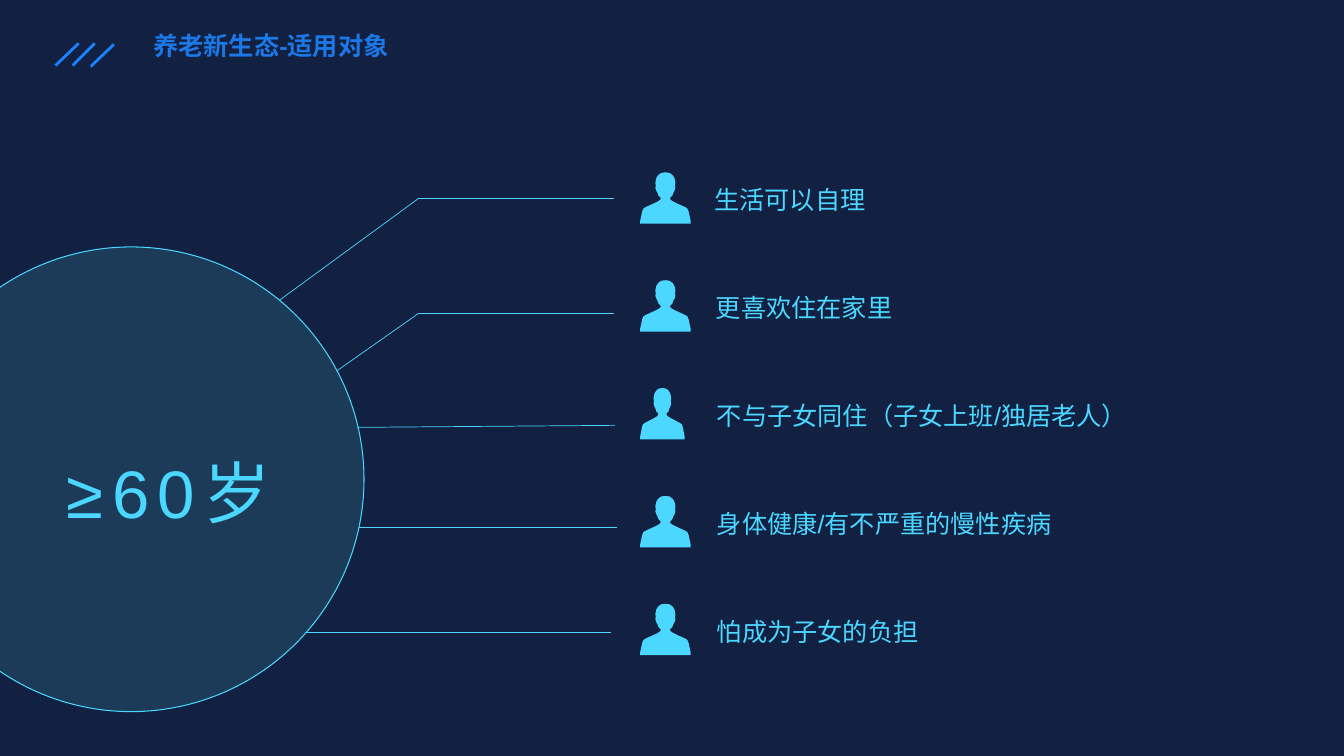
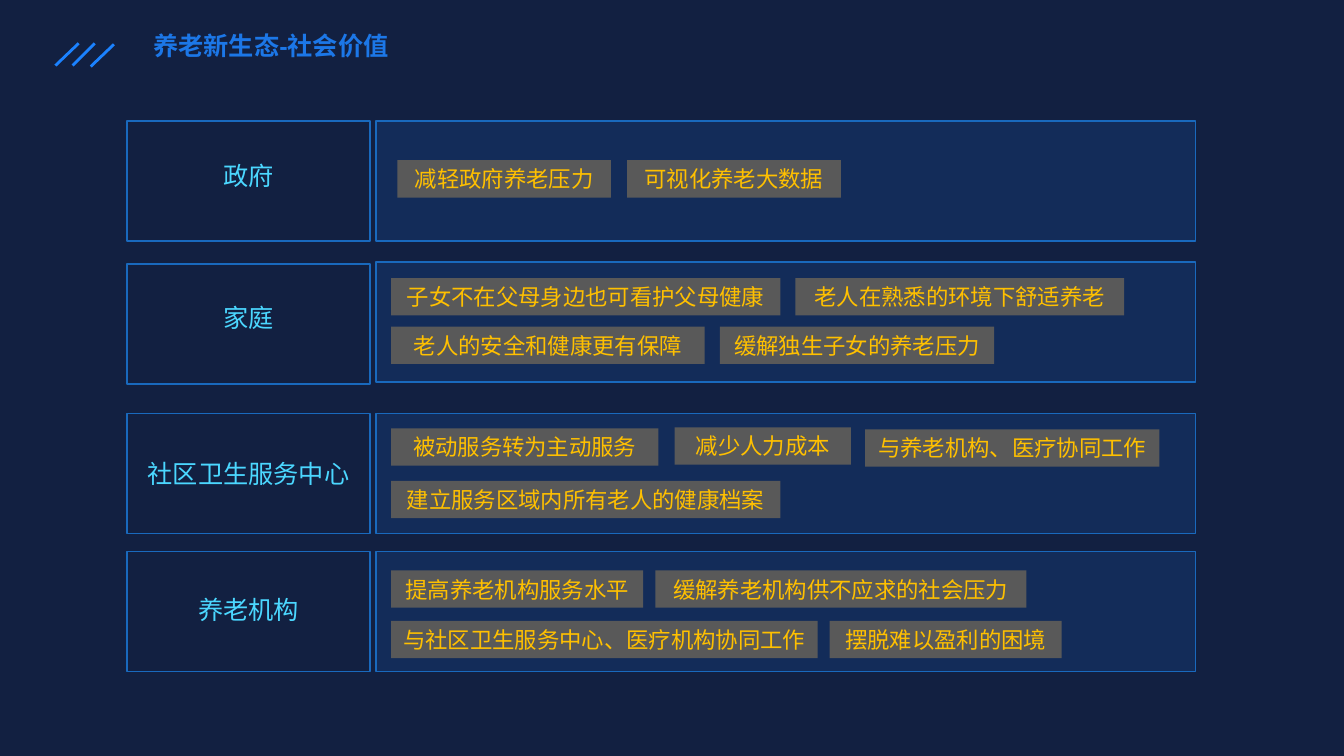
from itertools import pairwise

from lxml import etree
from pptx import Presentation
from pptx.dml.color import RGBColor
from pptx.enum.shapes import MSO_CONNECTOR, MSO_SHAPE
from pptx.enum.text import MSO_ANCHOR, MSO_AUTO_SIZE, PP_ALIGN
from pptx.oxml.ns import qn
from pptx.util import Inches, Pt

STRAIGHT = MSO_CONNECTOR.STRAIGHT
OVAL, RECTANGLE = MSO_SHAPE.OVAL, MSO_SHAPE.RECTANGLE
LEFT, CENTER = PP_ALIGN.LEFT, PP_ALIGN.CENTER
TOP, MIDDLE = MSO_ANCHOR.TOP, MSO_ANCHOR.MIDDLE
NO_AUTOFIT = MSO_AUTO_SIZE.NONE

NAVY = RGBColor(0x12, 0x20, 0x41)
CYAN = RGBColor(0x4B, 0xD7, 0xFF)
AQUA = RGBColor(0x62, 0xFF, 0xFF)
BLUE = RGBColor(0x1B, 0x82, 0xFF)
TITLE_BLUE = RGBColor(0x1C, 0x77, 0xE7)
BORDER_BLUE = RGBColor(0x19, 0x69, 0xBD)
GRAY = RGBColor(0x59, 0x59, 0x59)
GOLD = RGBColor(0xFF, 0xC0, 0x00)

FONT = "Arial"
TITLE_FORMAT = {"size": Pt(18), "bold": True, "color": TITLE_BLUE}
LABEL_FORMAT = {"size": Pt(18), "color": CYAN}
AGE_FORMAT = {"size": Pt(48), "color": CYAN}
TAG_FORMAT = {"size": Pt(16), "color": GOLD}

SLASHES = [((0.55, 0.65), (0.78, 0.43)),
           ((0.72, 0.65), (0.94, 0.43)),
           ((0.9, 0.66), (1.13, 0.44))]

# Audience slide: text, box left, box width, icon width
AUDIENCES = [
    ("生活可以自理", 6.83, 2.01, 0.5),
    ("更喜欢住在家里", 6.52, 2.91, 0.5),
    ("不与子女同住（子女上班/独居老人）", 6.76, 4.77, 0.44),
    ("身体健康/有不严重的慢性疾病", 6.79, 3.96, 0.5),
    ("怕成为子女的负担", 6.85, 2.52, 0.5),
]
AUDIENCE_TOP, AUDIENCE_PITCH = 1.74, 1.07
ICON_LEFT, ICON_RISE, ICON_HEIGHT = 6.35, 0.03, 0.51
LEADERS = [
    [(2.77, 2.98), (4.15, 1.97), (6.09, 1.97)],
    [(3.34, 3.68), (4.15, 3.11), (6.09, 3.11)],
    [(3.54, 4.24), (6.1, 4.22)],
    [(3.56, 5.23), (6.12, 5.23)],
    [(3.04, 6.27), (6.06, 6.27)],
]
# Right half of the person, as shares of the icon's width (from its centre) and height
PERSON_HALF = [
    (0, 0), (0.08, 0.01), (0.14, 0.05), (0.18, 0.11), (0.2, 0.2), (0.19, 0.26),
    (0.2, 0.3), (0.18, 0.36), (0.16, 0.39), (0.14, 0.45), (0.09, 0.5),
    (0.1, 0.53), (0.14, 0.56), (0.22, 0.6), (0.4, 0.68), (0.44, 0.71),
    (0.46, 0.76), (0.5, 0.94), (0.5, 1),
]

# Value slide
LABEL_LEFT, LABEL_WIDTH = 1.08, 2.77
CELL_LEFT, CELL_WIDTH, CELL_HEIGHT = 1.26, 2.41, 1.19
BAND_LEFT, BAND_WIDTH = 3.73, 8.13
TAG_HEIGHT = 0.37
VALUES = [
    {"group": "政府", "label_top": 1.54, "cell_top": 1.2, "band_top": 1.2,
     "tags": [("减轻政府养老压力", 3.94, 1.59, 2.12),
              ("可视化养老大数据", 6.22, 1.59, 2.12)]},
    {"group": "家庭", "label_top": 2.95, "cell_top": 2.62, "band_top": 2.6,
     "tags": [("子女不在父母身边也可看护父母健康", 3.88, 2.76, 3.86),
              ("老人在熟悉的环境下舒适养老", 7.89, 2.76, 3.26),
              ("老人的安全和健康更有保障", 3.88, 3.24, 3.11),
              ("缓解独生子女的养老压力", 7.14, 3.24, 2.72)]},
    {"group": "社区卫生服务中心", "label_top": 4.5, "cell_top": 4.1, "band_top": 4.1,
     "tags": [("被动服务转为主动服务", 3.88, 4.25, 2.65),
              ("减少人力成本", 6.69, 4.24, 1.75),
              ("与养老机构、医疗协同工作", 8.58, 4.26, 2.92),
              ("建立服务区域内所有老人的健康档案", 3.88, 4.77, 3.86)]},
    {"group": "养老机构", "label_top": 5.85, "cell_top": 5.47, "band_top": 5.47,
     "tags": [("提高养老机构服务水平", 3.88, 5.66, 2.5),
              ("缓解养老机构供不应求的社会压力", 6.5, 5.66, 3.68),
              ("与社区卫生服务中心、医疗机构协同工作", 3.88, 6.16, 4.23),
              ("摆脱难以盈利的困境", 8.23, 6.16, 2.3)]},
]


def write(shape, text, text_format, align=CENTER, anchor=TOP, wrap=True, spacing=None):
    frame = shape.text_frame
    frame.auto_size = NO_AUTOFIT
    frame.word_wrap = wrap
    frame.vertical_anchor = anchor
    para = frame.paragraphs[0]
    para.alignment = align
    para.line_spacing = spacing
    span = para.add_run()
    span.text = text
    span.font.name = FONT
    for name, value in text_format.items():
        if name == "color":
            span.font.color.rgb = value
        else:
            setattr(span.font, name, value)
    return span


def add_label(page, place, text, text_format=LABEL_FORMAT, spacing=None):
    box = page.shapes.add_textbox(*map(Inches, place))
    return write(box, text, text_format, spacing=spacing)


def add_panel(page, kind, place, fill=None, opacity=None, line=None, weight=1):
    """Add a preset shape; opacity is a percentage."""
    panel = page.shapes.add_shape(kind, *map(Inches, place))
    panel.shadow.inherit = False
    if fill is None:
        panel.fill.background()
    else:
        panel.fill.solid()
        panel.fill.fore_color.rgb = fill
    if opacity is not None:
        color = panel.fill._xPr.find(qn("a:solidFill"))[0]
        etree.SubElement(color, qn("a:alpha")).set("val", str(opacity * 1000))
    if line is None:
        panel.line.fill.background()
    else:
        panel.line.color.rgb = line
        panel.line.width = Pt(weight)
    return panel


def add_line(page, start, end, color, weight):
    line = page.shapes.add_connector(STRAIGHT, *map(Inches, (*start, *end)))
    line.line.color.rgb = color
    line.line.width = Pt(weight)
    etree.SubElement(line._element.spPr, qn("a:effectLst"))


def add_person(page, left, top, width):
    outline = PERSON_HALF + [(-x, y) for x, y in reversed(PERSON_HALF[1:])]
    points = [(Inches(left + width * (0.5 + x)), Inches(top + ICON_HEIGHT * y))
              for x, y in outline]
    builder = page.shapes.build_freeform(*points[0])
    builder.add_line_segments(points[1:], close=True)
    person = builder.convert_to_shape()
    person.shadow.inherit = False
    person.fill.solid()
    person.fill.fore_color.rgb = CYAN
    person.line.fill.background()


def add_page(deck, title_text):
    """Add a title-only slide with the shared heading and slash marks."""
    page = deck.slides.add_slide(deck.slide_layouts[5])
    title = page.shapes.title
    title.left, title.top, title.width, title.height = map(Inches, (1.42, 0.25, 3.73, 0.4))
    write(title, title_text, TITLE_FORMAT, align=LEFT, anchor=MIDDLE)
    for start, end in SLASHES:
        add_line(page, start, end, BLUE, 2)
    return page


def build_audience_page(deck):
    page = add_page(deck, "养老新生态-适用对象")
    add_panel(page, OVAL, (-1.01, 2.45, 4.62, 4.61), AQUA, 12, CYAN, 0.75)
    age = add_label(page, (0.25, 4.32, 2.85, 0.95), "≥60岁", AGE_FORMAT, 1.14)
    age._r.get_or_add_rPr().set("spc", "600")
    for row, (text, left, width, icon_width) in enumerate(AUDIENCES):
        top = AUDIENCE_TOP + row * AUDIENCE_PITCH
        add_person(page, ICON_LEFT, top - ICON_RISE, icon_width)
        add_label(page, (left, top, width, 0.42), text, spacing=1.14)
    for leader in LEADERS:
        for start, end in pairwise(leader):
            add_line(page, start, end, CYAN, 0.5)


def build_value_page(deck):
    page = add_page(deck, "养老新生态-社会价值")
    for row in VALUES:
        add_panel(page, RECTANGLE, (CELL_LEFT, row["cell_top"], CELL_WIDTH, CELL_HEIGHT),
                  line=BORDER_BLUE)
        add_label(page, (LABEL_LEFT, row["label_top"], LABEL_WIDTH, 0.4), row["group"])
        add_panel(page, RECTANGLE, (BAND_LEFT, row["band_top"], BAND_WIDTH, CELL_HEIGHT),
                  BLUE, 13, BORDER_BLUE)
        for text, left, top, width in row["tags"]:
            tag = add_panel(page, RECTANGLE, (left, top, width, TAG_HEIGHT), GRAY)
            write(tag, text, TAG_FORMAT, anchor=MIDDLE, wrap=False)


def main():
    deck = Presentation()
    deck.slide_width, deck.slide_height = Inches(13.33), Inches(7.5)
    background = deck.slide_master.background.fill
    background.solid()
    background.fore_color.rgb = NAVY
    build_audience_page(deck)
    build_value_page(deck)
    deck.save("out.pptx")


if __name__ == "__main__":
    main()
